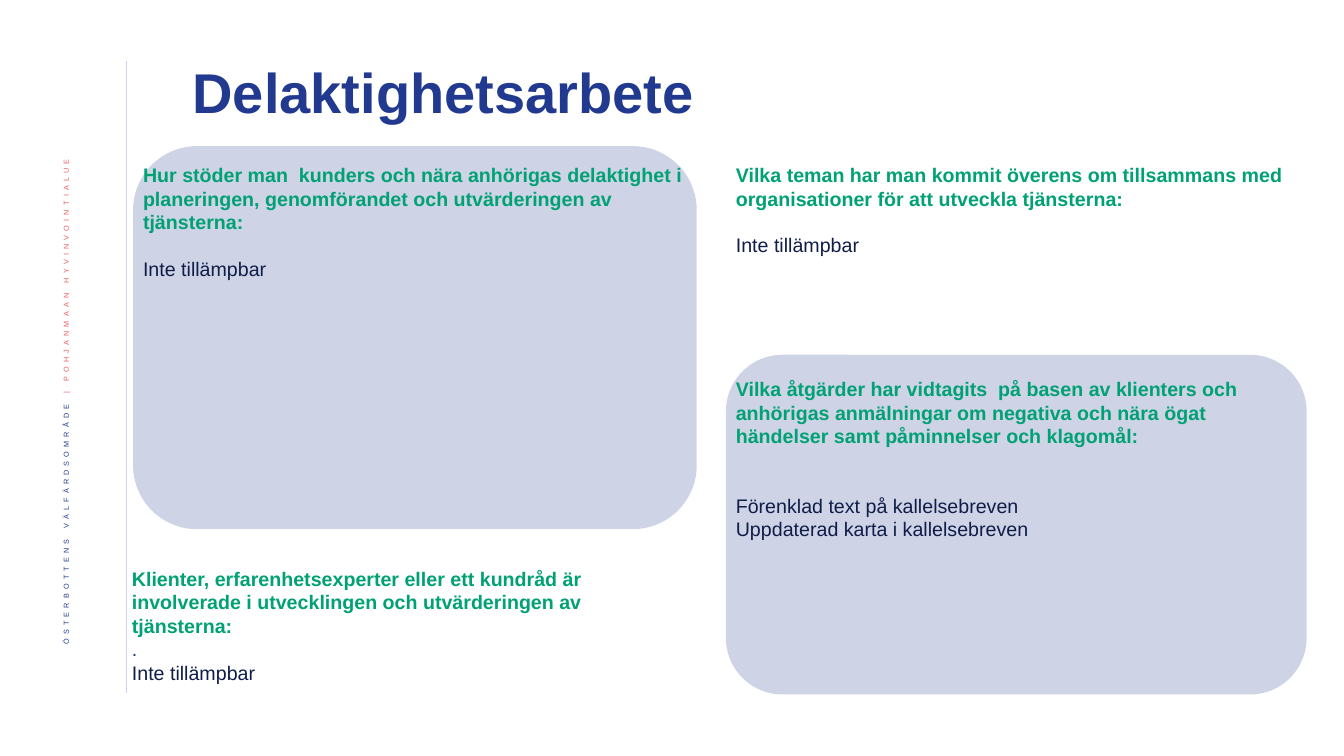
from lxml import etree
from pptx import Presentation, util as u
from pptx.dml.color import RGBColor
from pptx.enum import shapes, text
from pptx.oxml.ns import qn

COLORS = {
    "navy": "213A8F",
    "green": "00A174",
    "ink": "101D48",
    "coral": "EB5C5F",
    "rule": "C9D2F2",
}
CELL = u.Inches(0.1)
LEFT, RIGHT = 13.2, 72
LEFT_WIDTH, RIGHT_WIDTH = 55.9, 57.6


def cells(*values):
    return [round(value * CELL) for value in values]


def apply(target, values):
    for name, value in values.items():
        setattr(target, name, value)


class Board:
    font = "Arial"
    body_size = 14
    line_gap = 16.5

    def __init__(self, presentation):
        self.slide = presentation.slides.add_slide(presentation.slide_layouts[5])

    def style(self, font, color, **values):
        apply(font, {"name": self.font, **values})
        font.color.rgb = RGBColor.from_string(COLORS[color])

    def title(self, wording, *box):
        shape = self.slide.shapes.title
        apply(shape, dict(zip(("left", "top", "width", "height"), cells(*box))))
        frame = shape.text_frame
        apply(frame, {
            "text": wording,
            "vertical_anchor": text.MSO_ANCHOR.MIDDLE,
            "auto_size": text.MSO_AUTO_SIZE.NONE,
            "word_wrap": True,
        })
        paragraph = frame.paragraphs[0]
        apply(paragraph, {"alignment": text.PP_ALIGN.LEFT, "line_spacing": 0.9})
        self.style(paragraph.runs[0].font, "navy", size=u.Pt(40), bold=True)

    def rule(self, column, top, bottom):
        connector = self.slide.shapes.add_connector(
            shapes.MSO_CONNECTOR.STRAIGHT, *cells(column, top, column, bottom))
        connector.line.color.rgb = RGBColor.from_string(COLORS["rule"])
        connector.line.width = u.Pt(0.5)
        etree.SubElement(connector._element.spPr, qn("a:effectLst"))

    def panel(self, *box):
        shape = self.slide.shapes.add_shape(
            shapes.MSO_SHAPE.ROUNDED_RECTANGLE, *cells(*box))
        shape.shadow.inherit = False
        shape.line.fill.background()
        shape.fill.solid()
        shape.fill.fore_color.rgb = RGBColor.from_string(COLORS["navy"])
        color = shape._element.spPr.find(".//" + qn("a:srgbClr"))
        etree.SubElement(color, qn("a:alpha"), val="22000")

    def frame(self, *box):
        frame = self.slide.shapes.add_textbox(*cells(*box)).text_frame
        frame.word_wrap = True
        return frame

    def side_label(self, parts, *box):
        frame = self.frame(*box)
        frame.vertical_anchor = text.MSO_ANCHOR.MIDDLE
        frame._txBody.bodyPr.set("vert", "vert270")
        paragraph = frame.paragraphs[0]
        apply(paragraph, {"alignment": text.PP_ALIGN.RIGHT, "line_spacing": 0.9})
        for wording, color in parts:
            run = paragraph.add_run()
            run.text = wording
            self.style(run.font, color, size=u.Pt(9))
            properties = run._r.get_or_add_rPr()
            properties.set("baseline", "30000")
            properties.set("spc", "300")

    def answer(self, box, question, lines, gap_lines):
        frame = self.frame(*box)
        entries = [(question, "green", 0)]
        for index, (wording, color) in enumerate(lines):
            entries.append((wording, color, 0 if index else gap_lines))
        for index, (wording, color, gap) in enumerate(entries):
            paragraph = frame.add_paragraph() if index else frame.paragraphs[0]
            if gap:
                paragraph.space_before = u.Pt(gap * self.line_gap)
            run = paragraph.add_run()
            run.text = wording
            self.style(run.font, color, size=u.Pt(self.body_size), bold=index == 0)


def main():
    presentation = Presentation()
    apply(presentation, {"slide_width": u.Inches(13.33), "slide_height": u.Inches(7.5)})
    board = Board(presentation)
    board.rule(12.5, 6.1, 68.8)
    board.side_label([
        ("ÖSTERBOTTENS VÄLFÄRDSOMRÅDE ", "navy"),
        ("| POHJANMAAN HYVINVOINTIALUE ", "coral"),
    ], 4.2, 14.2, 5.2, 57.3)
    board.title("Delaktighetsarbete", 18.1, 4.5, 99.8, 9.9)
    board.panel(LEFT, 14.5, LEFT_WIDTH, 38)
    board.panel(RIGHT, 35.2, RIGHT_WIDTH, 33.7)

    not_applicable = ("Inte tillämpbar", "ink")
    board.answer(
        (LEFT, 15.7, LEFT_WIDTH, 15.5),
        "Hur stöder man  kunders och nära anhörigas delaktighet i planeringen, "
        "genomförandet och utvärderingen av tjänsterna:",
        [not_applicable], 1)
    board.answer(
        (RIGHT, 15.7, RIGHT_WIDTH, 13.1),
        "Vilka teman har man kommit överens om tillsammans med organisationer "
        "för att utveckla tjänsterna:",
        [not_applicable], 1)
    board.answer(
        (12.1, 55.7, LEFT_WIDTH, 15.5),
        "Klienter, erfarenhetsexperter eller ett kundråd är involverade i "
        "utvecklingen och utvärderingen av tjänsterna:",
        [(".", "navy"), not_applicable], 0)
    board.answer(
        (RIGHT, 36.9, RIGHT_WIDTH, 19.9),
        "Vilka åtgärder har vidtagits  på basen av klienters och anhörigas "
        "anmälningar om negativa och nära ögat händelser samt påminnelser och klagomål:",
        [("Förenklad text på kallelsebreven", "ink"),
         ("Uppdaterad karta i kallelsebreven", "ink")], 2)
    presentation.save("out.pptx")


if __name__ == "__main__":
    main()
